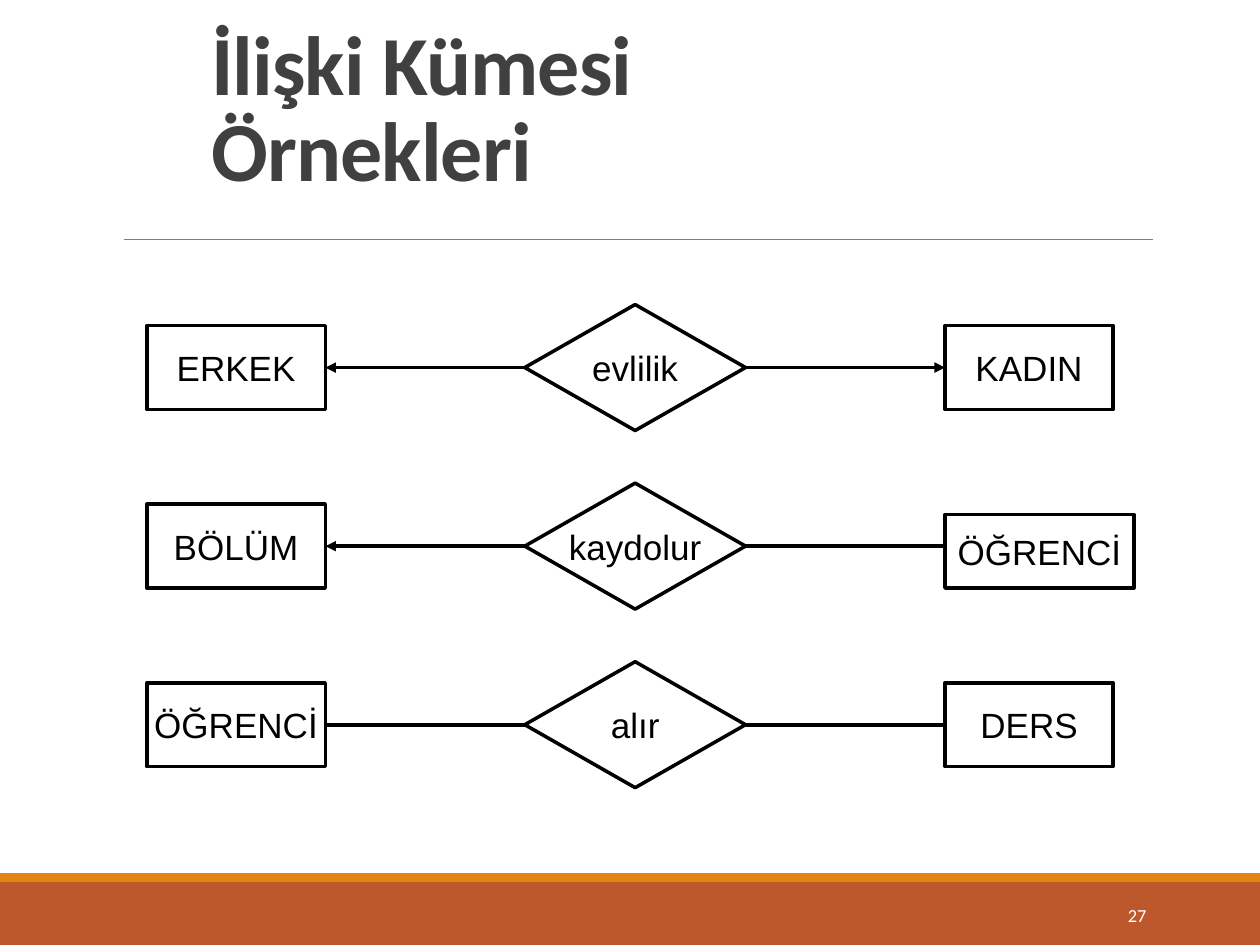
from dataclasses import dataclass

from lxml import etree
from pptx import Presentation
from pptx import util as u
from pptx.dml.color import RGBColor
from pptx.enum import shapes, text
from pptx.oxml.ns import qn


@dataclass(frozen=True)
class Theme:
    ink: str = "000000"
    head: str = "404040"
    rule: str = "808080"
    rust: str = "BD582C"
    gold: str = "E48312"
    pale: str = "FFFFFF"
    sans: str = "Arial"
    face: str = "Calibri"
    big: float = 48
    mid: float = 20
    small: float = 10.5
    thick: float = 2
    thin: float = 0.5


@dataclass(frozen=True)
class Box:
    name: str
    wide: float
    high: float = 1.69
    arrow: bool = False


@dataclass(frozen=True)
class Row:
    left: Box
    verb: str
    right: Box


THEME = Theme()
KIND = shapes.MSO_SHAPE
LEFT, MID, RIGHT = 2.96, 10.58, 19.05
FIRST, STEP = 7.41, 3.6
BOX_W, END_W, BOX_H = 3.6, 3.39, 1.69
GEM_W, GEM_H = 4.45, 2.54

ROWS = [
    Row(Box("ERKEK", BOX_W, arrow=True), "evlilik", Box("KADIN", END_W, arrow=True)),
    Row(Box("BÖLÜM", BOX_W, arrow=True), "kaydolur", Box("ÖĞRENCİ", 3.81, 1.48)),
    Row(Box("ÖĞRENCİ", BOX_W), "alır", Box("DERS", END_W)),
]


def style(para, face: str, size: float, tint: str, align) -> None:
    para.alignment = align
    font = para.font
    font.name, font.size = face, u.Pt(size)
    font.color.rgb = RGBColor.from_string(tint)


def add_bar(slide, top: float, high: float, tint: str) -> None:
    bar = slide.shapes.add_shape(KIND.RECTANGLE, 0, u.Cm(top), u.Cm(25.4), u.Cm(high))
    bar.shadow.inherit = False
    bar.fill.solid()
    bar.fill.fore_color.rgb = RGBColor.from_string(tint)
    bar.line.fill.background()


def add_node(slide, kind, label: str, x: float, y: float, wide: float, high: float):
    node = slide.shapes.add_shape(kind, u.Cm(x), u.Cm(y), u.Cm(wide), u.Cm(high))
    node.shadow.inherit = False
    node.fill.background()
    node.line.color.rgb = RGBColor.from_string(THEME.ink)
    node.line.width = u.Pt(THEME.thick)
    frame = node.text_frame
    frame.word_wrap = False
    frame.vertical_anchor = text.MSO_ANCHOR.MIDDLE
    frame.text = label
    style(frame.paragraphs[0], THEME.sans, THEME.mid, THEME.ink, text.PP_ALIGN.CENTER)
    return node


def add_line(slide, start: float, end: float, y: float, tint: str, width: float):
    line = slide.shapes.add_connector(
        shapes.MSO_CONNECTOR.STRAIGHT, u.Cm(start), u.Cm(y), u.Cm(end), u.Cm(y))
    line.line.color.rgb = RGBColor.from_string(tint)
    line.line.width = u.Pt(width)
    etree.SubElement(line._element.spPr, qn("a:effectLst"))
    return line


def add_link(slide, box: Box, node, gem, x: float, end: float, y: float,
             site: int, side: int) -> None:
    link = add_line(slide, x, end, y, THEME.ink, THEME.thick)
    if box.high == BOX_H:
        link.begin_connect(node, site)
    link.end_connect(gem, side)
    if box.arrow:
        etree.SubElement(link.line._get_or_add_ln(), qn("a:headEnd"), type="triangle")


def add_row(slide, row: Row, y: float) -> None:
    base = y + BOX_H / 2
    gem = add_node(slide, KIND.DIAMOND, row.verb, MID, y - GEM_H / 2, GEM_W, GEM_H)
    ends = [(row.left, LEFT, LEFT + BOX_W, MID, 3, 1),
            (row.right, RIGHT, RIGHT, MID + GEM_W, 1, 3)]
    for box, x, start, end, site, side in ends:
        node = add_node(slide, KIND.RECTANGLE, box.name, x, base - box.high,
                        box.wide, box.high)
        add_link(slide, box, node, gem, start, end, y, site, side)


def add_text(slide, label: str, x: float, y: float, wide: float, high: float, anchor):
    frame = slide.shapes.add_textbox(u.Cm(x), u.Cm(y), u.Cm(wide), u.Cm(high)).text_frame
    frame.word_wrap = True
    frame.vertical_anchor = anchor
    frame.text = label
    return frame


def main() -> None:
    deck = Presentation()
    deck.slide_width, deck.slide_height = u.Cm(25.4), u.Cm(19.05)
    slide = deck.slides.add_slide(deck.slide_layouts[6])

    add_bar(slide, 17.78, 1.27, THEME.rust)
    add_bar(slide, 17.6, 0.18, THEME.gold)
    add_line(slide, 2.49, 23.24, 4.83, THEME.rule, THEME.thin)

    title = add_text(slide, "İlişki Kümesi Örnekleri", 4.01, 1.83, 15.67, 2.29,
                     text.MSO_ANCHOR.BOTTOM)
    title.margin_right = u.Cm(0.8)
    para = title.paragraphs[0]
    style(para, THEME.face, THEME.big, THEME.head, text.PP_ALIGN.LEFT)
    para.font.bold = True
    para.line_spacing = 0.85
    para.runs[0].font._element.set("spc", "-50")

    for i, row in enumerate(ROWS):
        add_row(slide, row, FIRST + i * STEP)

    page = add_text(slide, "27", 20.62, 17.93, 2.74, 1.02, text.MSO_ANCHOR.MIDDLE)
    style(page.paragraphs[0], THEME.face, THEME.small, THEME.pale, text.PP_ALIGN.RIGHT)
    deck.save("out.pptx")


if __name__ == "__main__":
    main()
